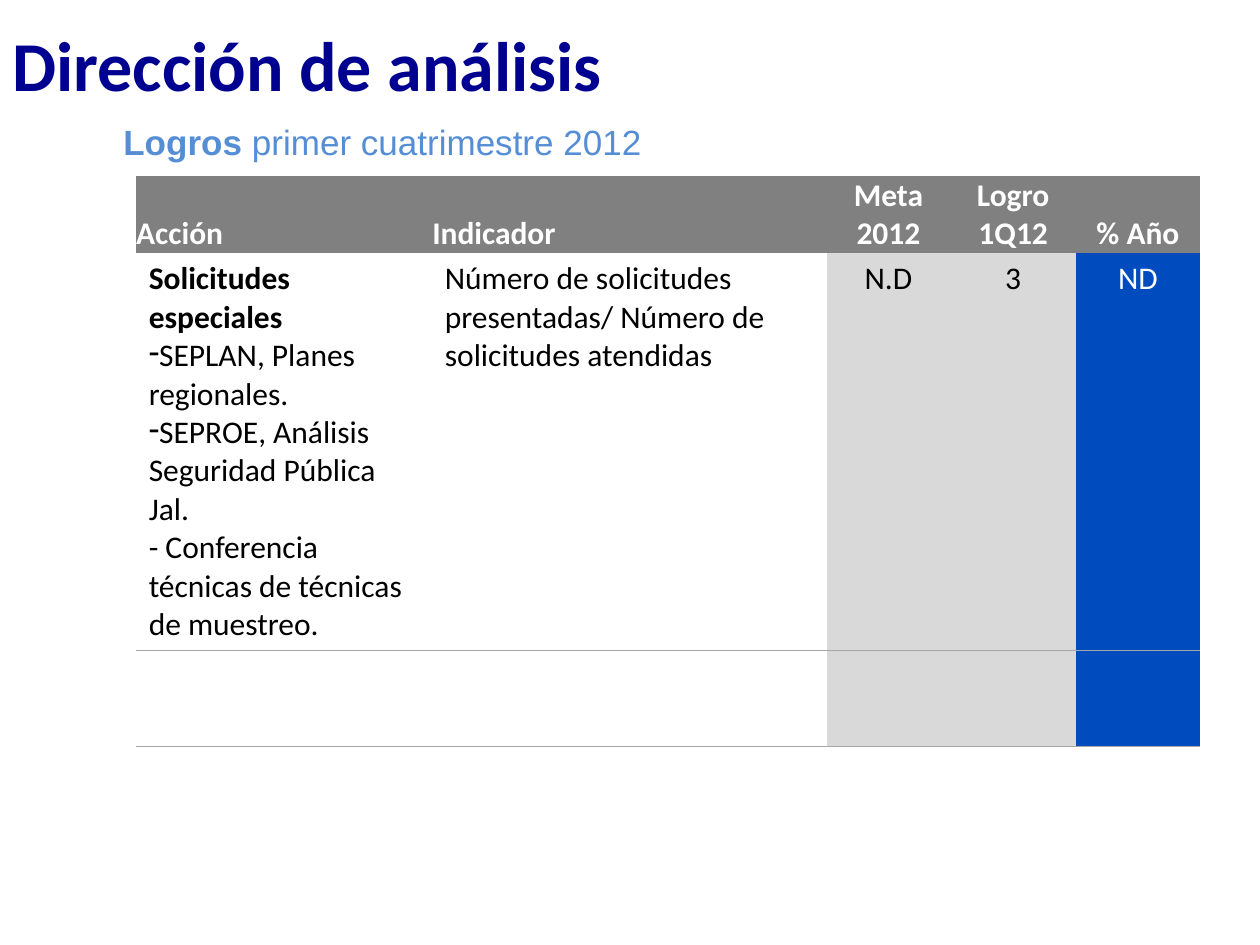
from pptx import Presentation
from pptx.dml.color import RGBColor as RGB
from pptx.enum.text import MSO_ANCHOR as Anchor, PP_ALIGN as Align
from pptx.oxml.ns import qn
from pptx.util import Pt
from lxml.etree import SubElement, Element

THEME = {
    "title": "000090", "sub": "558ED5", "head": "808080", "pale": "D9D9D9",
    "deep": "004CBF", "rule": "A6A6A6", "white": "FFFFFF", "black": "000000",
    "title_size": 40, "sub_size": 20, "cell_size": 18,
    "body_font": "Calibri", "sub_font": "Arial",
}

# A paragraph is a list of (text, bold) runs.
TITLE = [[("Dirección de análisis", True)]]
SUBTITLE = [[("Logros", True), (" primer cuatrimestre 2012", False)]]
HEADS = ["Acción", "Indicador", "Meta 2012", "Logro 1Q12", "% Año"]
ACTION = [
    [("Solicitudes especiales", True)],
    [("SEPLAN, Planes regionales.", False)],
    [("SEPROE, Análisis Seguridad Pública Jal.", False)],
    [("- Conferencia técnicas de técnicas de muestreo.", False)],
]
DASHED = (1, 2)
VALUES = [
    "Número de solicitudes presentadas/ Número de solicitudes atendidas",
    "N.D", "3", "ND",
]
WIDTHS = [169.2, 225.4, 70.6, 72, 70.6]
HEIGHTS = [44, 227, 54.7]
FILLS = [None, None, "pale", "pale", "deep"]


def color(name):
    return RGB.from_string(THEME[name])


def write(frame, paras, size, ink, font="body_font", align=None, lead=None, dashed=()):
    """Fill a text frame; dashed lists the paragraphs that get a dash bullet."""
    frame.word_wrap = True
    for i, runs in enumerate(paras):
        para = frame.paragraphs[0] if i == 0 else frame.add_paragraph()
        if i in dashed:
            props = para._p.get_or_add_pPr()
            props.set("marL", "0")
            props.set("indent", "0")
            SubElement(props, qn("a:buChar"), char="-")
        if align is not None:
            para.alignment = align
        if lead:
            para.line_spacing = Pt(lead)
        for text, bold in runs:
            run = para.add_run()
            run.text = text
            run.font.size = Pt(THEME[size])
            run.font.name = THEME[font]
            run.font.bold = bold
            run.font.color.rgb = color(ink)


def add_box(slide, left, top, width, height, anchor):
    box = slide.shapes.add_textbox(Pt(left), Pt(top), Pt(width), Pt(height))
    box.text_frame.vertical_anchor = anchor
    return box.text_frame


def paint(cell, fill):
    if fill:
        cell.fill.solid()
        cell.fill.fore_color.rgb = color(fill)
    else:
        cell.fill.background()


def rule(cell, sides):
    """Draw grey borders; they must precede the fill in the cell properties."""
    props = cell._tc.get_or_add_tcPr()
    for i, side in enumerate(sides):
        line = Element(qn(f"a:ln{side}"), w=str(Pt(1)))
        solid = SubElement(line, qn("a:solidFill"))
        SubElement(solid, qn("a:srgbClr"), val=THEME["rule"])
        props.insert(i, line)


def add_grid(slide):
    frame = slide.shapes.add_table(
        len(HEIGHTS), len(WIDTHS), Pt(77.8), Pt(100.8), Pt(sum(WIDTHS)), Pt(sum(HEIGHTS)))
    table = frame.table
    table.horz_banding = table.first_row = False
    style = table._tbl.tblPr.find(qn("a:tableStyleId"))
    style.text = "{2D5ABB26-0587-4C30-8999-92F81FD0307C}"  # no style, no grid
    for row, height in zip(table.rows, HEIGHTS):
        row.height = Pt(height)
    for col, width in zip(table.columns, WIDTHS):
        col.width = Pt(width)

    bodies = [ACTION] + [[[(text, False)]] for text in VALUES]
    for c, (name, body, fill) in enumerate(zip(HEADS, bodies, FILLS)):
        head, main, blank = (table.cell(r, c) for r in range(3))
        head.margin_left = head.margin_right = head.margin_top = head.margin_bottom = 0
        head.vertical_anchor = Anchor.BOTTOM
        write(head.text_frame, [[(name, True)]], "cell_size", "white",
              align=Align.JUSTIFY if c < 2 else Align.CENTER)
        write(main.text_frame, body, "cell_size", "white" if fill == "deep" else "black",
              align=Align.CENTER if fill else None, dashed=DASHED if c == 0 else ())
        for cell, shade, sides in ((head, "head", ""), (main, fill, "B"), (blank, fill, "TB")):
            paint(cell, shade)
            rule(cell, sides)


def main():
    deck = Presentation()
    deck.slide_width, deck.slide_height = Pt(720), Pt(540)
    slide = deck.slides.add_slide(deck.slide_layouts[6])
    add_grid(slide)
    write(add_box(slide, 0, 0, 600, 84, Anchor.MIDDLE), TITLE, "title_size", "title", lead=36)
    write(add_box(slide, 63.4, 65.5, 594, 34.6, Anchor.TOP), SUBTITLE,
          "sub_size", "sub", font="sub_font")
    deck.save("out.pptx")


if __name__ == "__main__":
    main()
